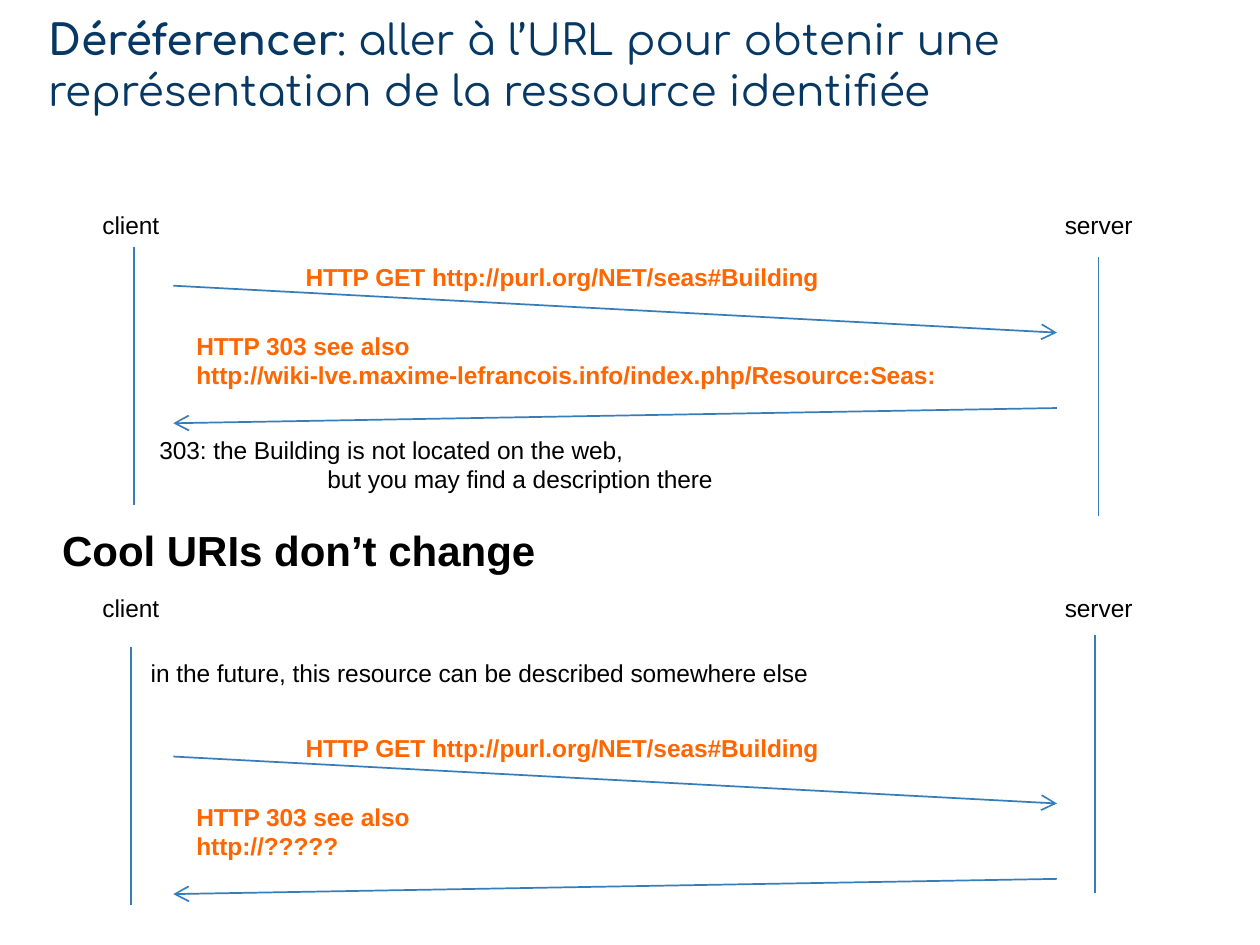
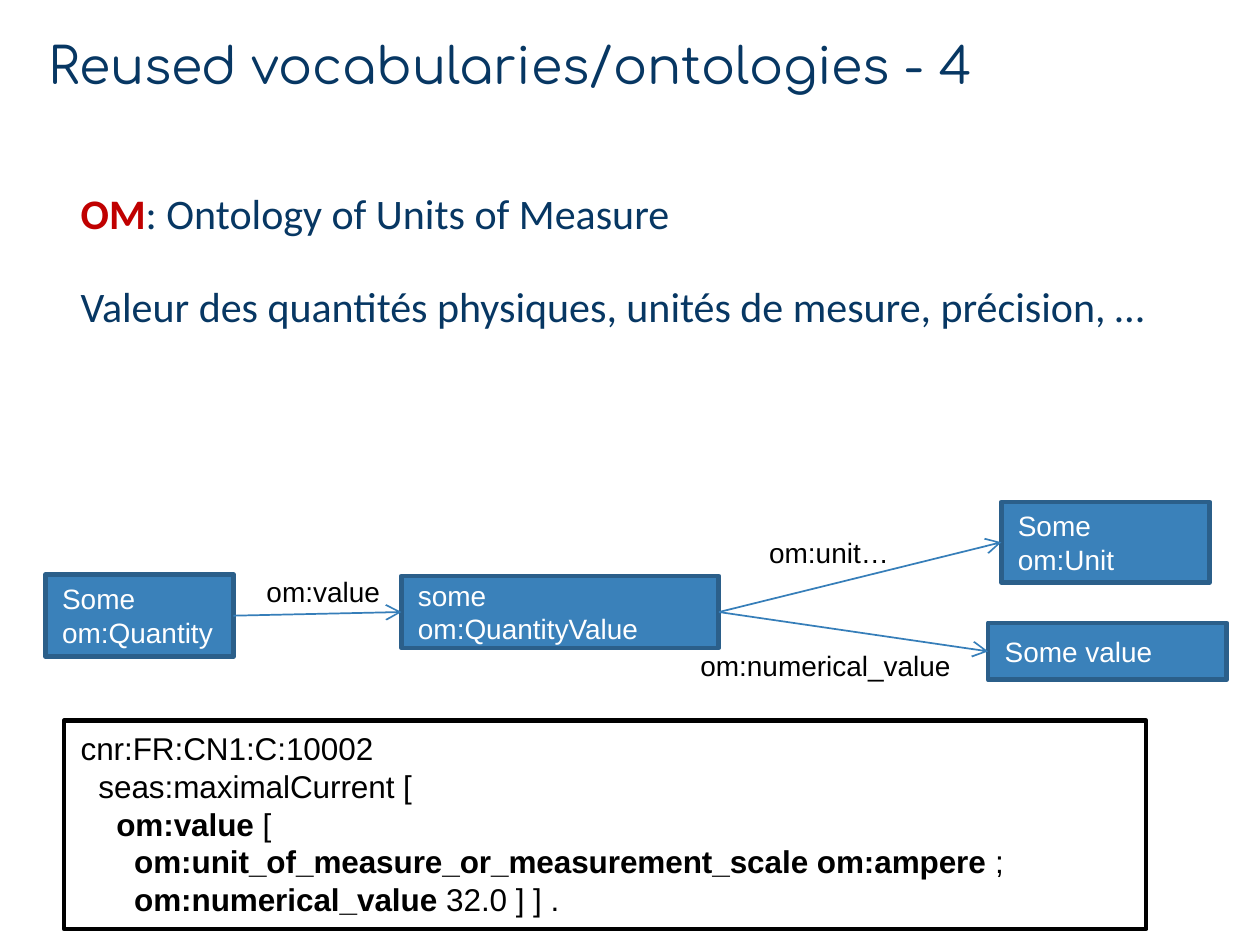
from lxml import etree
from pptx import Presentation
from pptx.dml.color import RGBColor
from pptx.enum.shapes import MSO_CONNECTOR, MSO_SHAPE
from pptx.enum.text import MSO_ANCHOR, PP_ALIGN
from pptx.oxml.ns import qn
from pptx.util import Cm, Pt

STRAIGHT = MSO_CONNECTOR.STRAIGHT
RECTANGLE = MSO_SHAPE.RECTANGLE
TOP, MIDDLE = MSO_ANCHOR.TOP, MSO_ANCHOR.MIDDLE
LEFT = PP_ALIGN.LEFT

NAVY = RGBColor(0x07, 0x37, 0x63)
ORANGE = RGBColor(0xFF, 0x66, 0x00)
RED = RGBColor(0xC0, 0x00, 0x00)
BLACK = RGBColor(0x00, 0x00, 0x00)
WHITE = RGBColor(0xFF, 0xFF, 0xFF)
LINE_BLUE = RGBColor(0x36, 0x7E, 0xB9)
NODE_FILL = RGBColor(0x3A, 0x81, 0xBA)
NODE_BORDER = RGBColor(0x2B, 0x5F, 0x8A)

RIGHT_SITE, LEFT_SITE = 3, 1


def add_text(slide, paragraphs, box, size=10.5, font="Arial", color=BLACK, bold=False,
             wrap=False, anchor=TOP, inset=None, space_before=0, indents=(),
             fill=None, border=None):
    """Add text in a box given in cm, as a rectangle if it has a fill.

    A paragraph is a string or a list of (text, bold, color) runs.
    """
    bounds = [Cm(length) for length in box]
    if fill is None:
        shape = slide.shapes.add_textbox(*bounds)
    else:
        shape = slide.shapes.add_shape(RECTANGLE, *bounds)
        shape.shadow.inherit = False
        shape.fill.solid()
        shape.fill.fore_color.rgb = fill
        if border is None:
            shape.line.fill.background()
        else:
            shape.line.color.rgb = border
            shape.line.width = Pt(2)
    frame = shape.text_frame
    frame.word_wrap = wrap
    frame.vertical_anchor = anchor
    if inset is not None:
        frame.margin_left = frame.margin_right = Cm(inset)
        frame.margin_top = frame.margin_bottom = Cm(inset)
    for index, content in enumerate(paragraphs):
        paragraph = frame.add_paragraph() if index else frame.paragraphs[0]
        paragraph.alignment = LEFT
        if index and space_before:
            paragraph.space_before = Pt(space_before)
        if indents:
            paragraph._p.get_or_add_pPr().set("marL", str(Cm(indents[index])))
        runs = [(content, bold, color)] if isinstance(content, str) else content
        for text, run_bold, run_color in runs:
            run = paragraph.add_run()
            run.text = text
            run.font.name = font
            run.font.size = Pt(size)
            run.font.bold = run_bold
            run.font.color.rgb = run_color
    return shape


def add_line(slide, start, end, arrow=False):
    points = [Cm(length) for length in (*start, *end)]
    connector = slide.shapes.add_connector(STRAIGHT, *points)
    connector.line.color.rgb = LINE_BLUE
    connector.line.width = Pt(0.75)
    if arrow:
        etree.SubElement(connector.line._get_or_add_ln(), qn("a:tailEnd"), type="arrow")
    etree.SubElement(connector._element.spPr, qn("a:effectLst"))
    return connector


presentation = Presentation()
presentation.slide_width = Cm(19.05)
presentation.slide_height = Cm(14.29)
blank_layout = presentation.slide_layouts[6]

titles = [
    (18, [("Déréferencer", True, NAVY),
          (": aller à l’URL pour obtenir une représentation de la ressource identifiée",
           False, NAVY)]),
    (21.6, [("Reused vocabularies/ontologies - 4", False, NAVY)]),
]
slides = []
for size, title in titles:
    slide = presentation.slides.add_slide(blank_layout)
    add_text(slide, [title], (0.48, 0.36, 17.15, 1.22), size=size, font="Comfortaa",
             wrap=True, anchor=MIDDLE, inset=0.25)
    slides.append(slide)
http_slide, ontology_slide = slides

# HTTP exchanges between client and server
add_text(http_slide, ["Cool URIs don’t change"], (0.69, 7.8, 17.25, 6.15),
         size=18, bold=True, wrap=True, fill=WHITE)

LIFELINE_LENGTH = 3.91
EXCHANGE_STEP = 7.12
# label top, client lifeline start, server lifeline start, redirect address, its width
exchanges = [
    (3.05, (2.03, 3.73), (16.61, 3.89),
     "http://wiki-lve.maxime-lefrancois.info/index.php/Resource:Seas:", 11.86),
    (8.84, (1.98, 9.78), (16.56, 9.6), "http://?????", 3.91),
]
for index, (label_top, client, server, address, width) in enumerate(exchanges):
    shift = index * EXCHANGE_STEP
    add_text(http_slide, ["client"], (1.3, label_top, 1.4, 0.71))
    add_text(http_slide, ["server"], (15.85, label_top, 1.55, 0.71))
    for x, y in (client, server):
        add_line(http_slide, (x, y), (x, y + LIFELINE_LENGTH))
    add_text(http_slide, ["HTTP GET http://purl.org/NET/seas#Building"],
             (4.37, 3.84 + shift, 8.38, 0.71), color=ORANGE, bold=True)
    add_line(http_slide, (2.62, 4.32 + shift), (15.98, 5.03 + shift), arrow=True)
    add_text(http_slide, ["HTTP 303 see also", address],
             (2.72, 4.88 + shift, width, 1.14), color=ORANGE, bold=True)
    add_line(http_slide, (15.98, 6.17 + shift), (2.62, 6.4 + shift), arrow=True)

add_text(http_slide,
         ["303: the Building is not located on the web,",
          "but you may find a description there"],
         (2.16, 6.45, 9.02, 1.14), indents=(0, 2.54))
add_text(http_slide, ["in the future, this resource can be described somewhere else"],
         (2.03, 9.83, 10.64, 0.71))

# Ontology of units of measure
add_text(ontology_slide,
         [[("OM", True, RED), (": Ontology of Units of Measure", False, NAVY)],
          "Valeur des quantités physiques, unités de mesure, précision, …"],
         (0.97, 2.59, 17.15, 4), size=18, font="Calibri", color=NAVY,
         wrap=True, inset=0.25, space_before=18)

nodes = [
    (["Some", "om:Quantity"], (0.69, 8.69, 2.84, 1.24)),
    (["some om:QuantityValue"], (6.07, 8.71, 4.8, 1.09)),
    (["Some", "om:Unit"], (15.14, 7.59, 3.15, 1.22)),
    (["Some value"], (14.94, 9.42, 3.61, 0.86)),
]
quantity, quantity_value, unit, number = [
    add_text(ontology_slide, lines, box, size=12, color=WHITE, wrap=True,
             anchor=MIDDLE, fill=NODE_FILL, border=NODE_BORDER)
    for lines, box in nodes
]

properties = [
    ("om:value", (3.78, 8.56, 2.24, 0.76), quantity, quantity_value),
    ("om:unit…", (11.38, 7.98, 2.34, 0.76), quantity_value, unit),
    ("om:numerical_value", (10.34, 9.68, 4.32, 0.76), quantity_value, number),
]
for name, box, subject, target in properties:
    connector = add_line(ontology_slide, (0, 0), (1, 1), arrow=True)
    connector.begin_connect(subject, RIGHT_SITE)
    connector.end_connect(target, LEFT_SITE)
    add_text(ontology_slide, [name], box, size=12)

INDENT = 0.27
add_text(ontology_slide,
         ["cnr:FR:CN1:C:10002",
          "seas:maximalCurrent [",
          [("om:value", True, BLACK), (" [", False, BLACK)],
          [("om:unit_of_measure_or_measurement_scale om:ampere", True, BLACK),
           (" ;", False, BLACK)],
          [("om:numerical_value", True, BLACK), (" 32.0 ] ] .", False, BLACK)]],
         (0.97, 10.9, 16.36, 3.15), size=13.5, wrap=True,
         indents=[level * INDENT for level in (0, 1, 2, 3, 3)],
         fill=WHITE, border=BLACK)

presentation.save("out.pptx")
